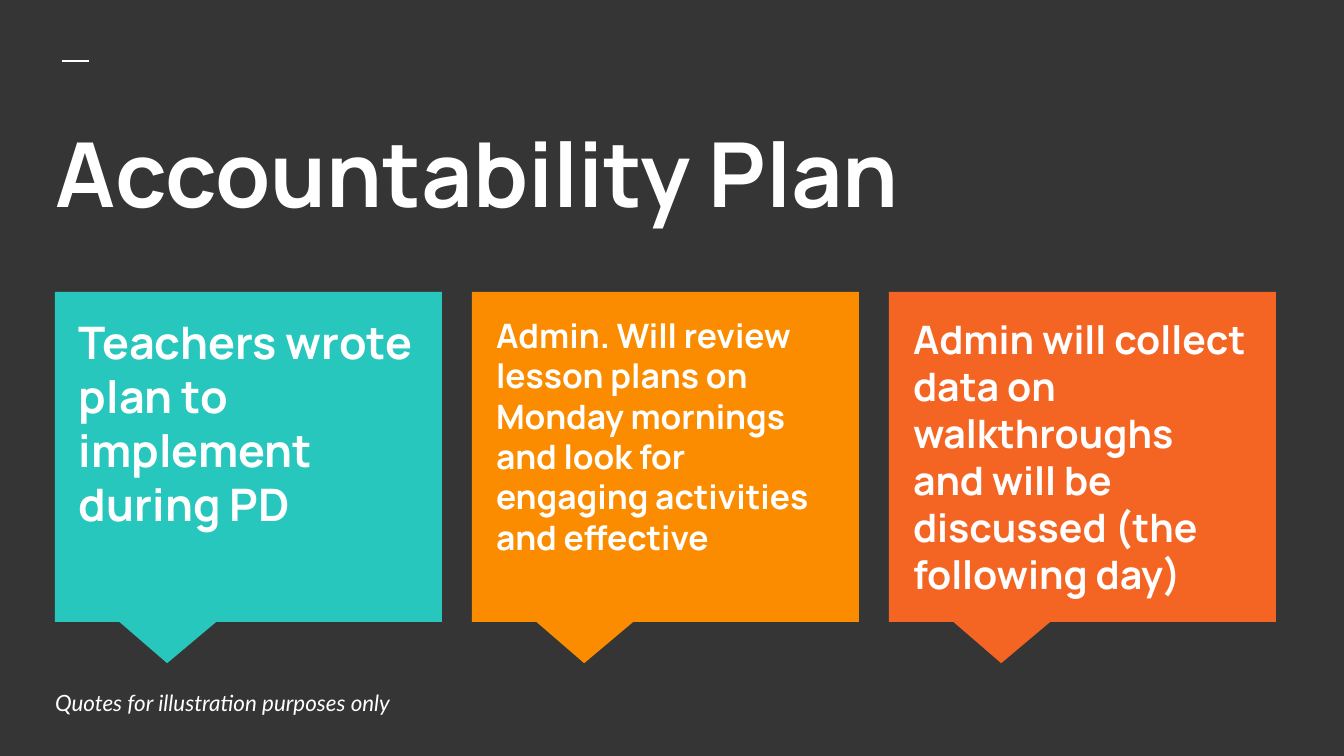
from pptx import Presentation
from pptx.dml.color import RGBColor
from pptx.enum.shapes import MSO_CONNECTOR, MSO_SHAPE
from pptx.enum.text import MSO_ANCHOR
from pptx.oxml.ns import qn
from pptx.util import Pt
from lxml import etree

STRAIGHT = MSO_CONNECTOR.STRAIGHT
CALLOUT = MSO_SHAPE.RECTANGULAR_CALLOUT
TOP = MSO_ANCHOR.TOP
MIDDLE = MSO_ANCHOR.MIDDLE

WHITE = RGBColor(0xFF, 0xFF, 0xFF)
CHARCOAL = RGBColor(0x35, 0x35, 0x35)
TEAL = RGBColor(0x27, 0xC7, 0xBD)
AMBER = RGBColor(0xFB, 0x8C, 0x00)
ORANGE = RGBColor(0xF4, 0x65, 0x24)

EMU_PER_PX = 914400 / 134.4


def px(*lengths):
    return [round(length * EMU_PER_PX) for length in lengths]


def add_text(text, at, size, font="Manrope", bold=False, italic=False, anchor=TOP, space_after=0):
    box = page.shapes.add_textbox(*px(*at))
    frame = box.text_frame
    frame.word_wrap = True
    frame.vertical_anchor = anchor
    inset = px(13)[0]
    frame.margin_left = frame.margin_right = inset
    frame.margin_top = frame.margin_bottom = inset
    para = frame.paragraphs[0]
    para.space_after = Pt(space_after)
    span = para.add_run()
    span.text = text
    span.font.name = font
    span.font.size = Pt(size)
    span.font.bold = bold
    span.font.italic = italic
    span.font.color.rgb = WHITE


deck = Presentation()
deck.slide_width, deck.slide_height = px(1344, 756)
page = deck.slides.add_slide(deck.slide_layouts[6])
page.background.fill.solid()
page.background.fill.fore_color.rgb = CHARCOAL

dash = page.shapes.add_connector(STRAIGHT, *px(62, 61, 89, 61))
dash.line.color.rgb = WHITE
dash.line.width = Pt(1.5)
etree.SubElement(dash.element.spPr, qn("a:effectLst"))

add_text("Accountability Plan", (42, 105, 1267, 150), 48, bold=True)

STEPS = [
    (TEAL, 24, "Teachers wrote plan to implement during PD"),
    (AMBER, 18, "Admin. Will review lesson plans on Monday mornings "
                "and look for engaging activities and effective"),
    (ORANGE, 21, "Admin will collect data on walkthroughs and will be "
                 "discussed (the following day)"),
]
FIRST_LEFT = 55
PITCH = 417

for index, (color, size, text) in enumerate(STEPS):
    left = FIRST_LEFT + index * PITCH
    callout = page.shapes.add_shape(CALLOUT, *px(left, 292, 387, 330))
    callout.adjustments[0] = -0.21
    callout.adjustments[1] = 0.625
    callout.shadow.inherit = False
    callout.fill.solid()
    callout.fill.fore_color.rgb = color
    callout.line.fill.background()
    add_text(text, (left + 11, 302, 364, 294), size, bold=True, space_after=12)

add_text("Quotes for illustration purposes only", (42, 684, 918, 38), 12,
         font="Lato", italic=True, anchor=MIDDLE)

deck.save("out.pptx")
